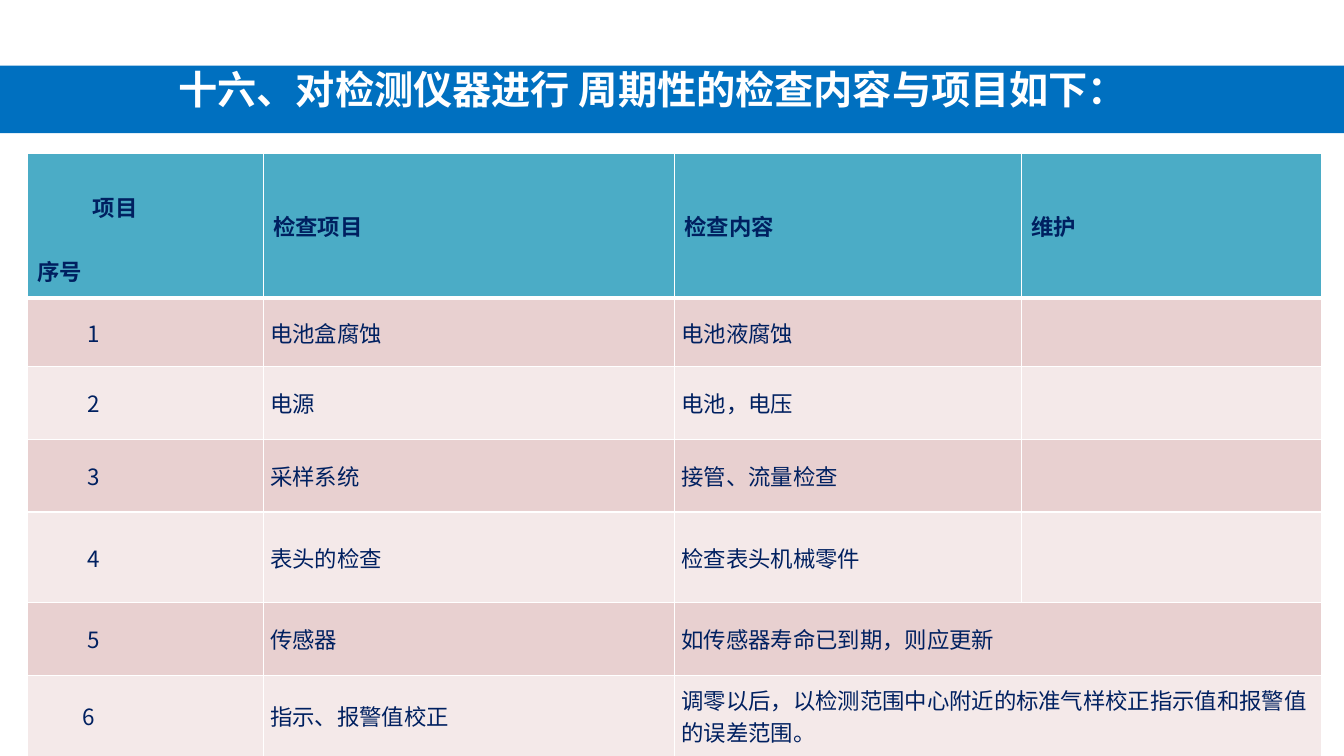
"""Build the slide on the periodic inspection of detection instruments."""
from dataclasses import dataclass

import lxml.etree
import pptx
import pptx.dml.color
import pptx.enum.text
import pptx.oxml.ns
import pptx.slide
import pptx.table
import pptx.text.text
import pptx.util

Inches = pptx.util.Inches
FONT = "Noto Sans CJK SC"
COLORS = {
    "bar": "0070C0",
    "header": "4BACC6",
    "odd": "E8D0D0",
    "even": "F4E9E9",
    "text": "002060",
    "white": "FFFFFF",
}
COLUMN_WIDTHS = (2.34, 4.08, 3.44, 2.98)
HEADER_HEIGHT = 1.44
HEADERS = ("检查项目", "检查内容", "维护")


@dataclass(frozen=True)
class Inspection:
    """One inspection row of the table."""

    item: str
    content: str
    height: float = 0.72
    merged: bool = False
    number_indent: float = 0.5


INSPECTIONS = (
    Inspection("电池盒腐蚀", "电池液腐蚀", height=0.68),
    Inspection("电源", "电池，电压"),
    Inspection("采样系统", "接管、流量检查"),
    Inspection("表头的检查", "检查表头机械零件", height=0.9),
    Inspection("传感器", "如传感器寿命已到期，则应更新", merged=True),
    Inspection(
        "指示、报警值校正",
        "调零以后，以检测范围中心附近的标准气样校正指示值和报警值的误差范围。",
        height=0.81,
        merged=True,
        number_indent=0.45,
    ),
)


def color(name: str) -> pptx.dml.color.RGBColor:
    """Return the named colour."""
    return pptx.dml.color.RGBColor.from_string(COLORS[name])


def write_text(
    paragraph: pptx.text.text._Paragraph,
    text: str,
    *,
    size: float = 16,
    bold: bool = False,
    fill: str = "text",
    indent: float = 0,
    space_before: float = 0,
    line_spacing: float = 1.0,
) -> None:
    """Write formatted, left-aligned text into a paragraph."""
    paragraph.alignment = pptx.enum.text.PP_ALIGN.LEFT
    paragraph.line_spacing = line_spacing
    paragraph.space_before = pptx.util.Pt(space_before)
    properties = paragraph._p.get_or_add_pPr()
    properties.set("marL", str(Inches(indent)))
    properties.set("indent", "0")
    run = paragraph.add_run()
    run.text = text
    run.font.name = FONT
    run.font.size = pptx.util.Pt(size)
    run.font.bold = bold
    run.font.color.rgb = color(fill)
    east_asian = lxml.etree.SubElement(run._r.get_or_add_rPr(), pptx.oxml.ns.qn("a:ea"))
    east_asian.set("typeface", FONT)


def style_cell(cell: pptx.table._Cell, fill: str, top: float = 1, bottom: float = 1) -> None:
    """Set the white borders, fill and anchor of a cell."""
    properties = cell._tc.get_or_add_tcPr()
    for side, width in (("L", 1), ("R", 1), ("T", top), ("B", bottom)):
        line = lxml.etree.SubElement(properties, pptx.oxml.ns.qn(f"a:ln{side}"))
        line.set("w", str(pptx.util.Pt(width)))
        solid = lxml.etree.SubElement(line, pptx.oxml.ns.qn("a:solidFill"))
        lxml.etree.SubElement(solid, pptx.oxml.ns.qn("a:srgbClr")).set("val", COLORS["white"])
    cell.fill.solid()
    cell.fill.fore_color.rgb = color(fill)
    cell.vertical_anchor = pptx.enum.text.MSO_ANCHOR.MIDDLE


def add_title(slide: pptx.slide.Slide) -> None:
    """Place the title on its blue bar."""
    title = slide.shapes.title
    title.left, title.top = Inches(0), Inches(0.65)
    title.width, title.height = Inches(13.33), Inches(0.67)
    title.fill.solid()
    title.fill.fore_color.rgb = color("bar")
    frame = title.text_frame
    frame.word_wrap = True
    frame.auto_size = pptx.enum.text.MSO_AUTO_SIZE.NONE
    frame.vertical_anchor = pptx.enum.text.MSO_ANCHOR.TOP
    write_text(
        frame.paragraphs[0],
        "十六、对检测仪器进行 周期性的检查内容与项目如下：",
        size=28,
        bold=True,
        fill="white",
        indent=1.67,
        line_spacing=0.9,
    )


def fill_header(table: pptx.table.Table) -> None:
    """Fill the header row with its two-part corner cell."""
    for cell in table.rows[0].cells:
        style_cell(cell, "header", bottom=3)
    corner = table.cell(0, 0)
    corner.vertical_anchor = pptx.enum.text.MSO_ANCHOR.TOP
    corner.margin_top = Inches(0.37)
    write_text(corner.text_frame.paragraphs[0], "项目", bold=True, indent=0.55)
    write_text(corner.text_frame.add_paragraph(), "序号", bold=True, space_before=23)
    for column, header in enumerate(HEADERS, start=1):
        write_text(table.cell(0, column).text_frame.paragraphs[0], header, bold=True)


def fill_inspection(table: pptx.table.Table, number: int, inspection: Inspection) -> None:
    """Fill the row of one inspection."""
    for cell in table.rows[number].cells:
        style_cell(cell, "odd" if number % 2 else "even", top=3 if number == 1 else 1)
    if inspection.merged:
        table.cell(number, 2).merge(table.cell(number, 3))
    number_paragraph = table.cell(number, 0).text_frame.paragraphs[0]
    write_text(number_paragraph, str(number), indent=inspection.number_indent)
    for column, text in enumerate((inspection.item, inspection.content), start=1):
        cell = table.cell(number, column)
        cell.margin_left = cell.margin_right = Inches(0.07)
        cell.margin_top = cell.margin_bottom = Inches(0)
        write_text(cell.text_frame.paragraphs[0], text)


def add_inspection_table(slide: pptx.slide.Slide) -> None:
    """Add the table of inspections."""
    heights = (HEADER_HEIGHT, *(inspection.height for inspection in INSPECTIONS))
    table = slide.shapes.add_table(
        len(heights),
        len(COLUMN_WIDTHS),
        Inches(0.27),
        Inches(1.52),
        Inches(sum(COLUMN_WIDTHS)),
        Inches(sum(heights)),
    ).table
    table.horz_banding = False
    for column, width in zip(table.columns, COLUMN_WIDTHS):
        column.width = Inches(width)
    for row, height in zip(table.rows, heights):
        row.height = Inches(height)
    fill_header(table)
    for number, inspection in enumerate(INSPECTIONS, start=1):
        fill_inspection(table, number, inspection)


def main() -> None:
    """Build and save the presentation."""
    presentation = pptx.Presentation()
    presentation.slide_width = Inches(13.33)
    presentation.slide_height = Inches(7.5)
    slide = presentation.slides.add_slide(presentation.slide_layouts.get_by_name("Title Only"))
    add_title(slide)
    add_inspection_table(slide)
    presentation.save("out.pptx")


if __name__ == "__main__":
    main()
